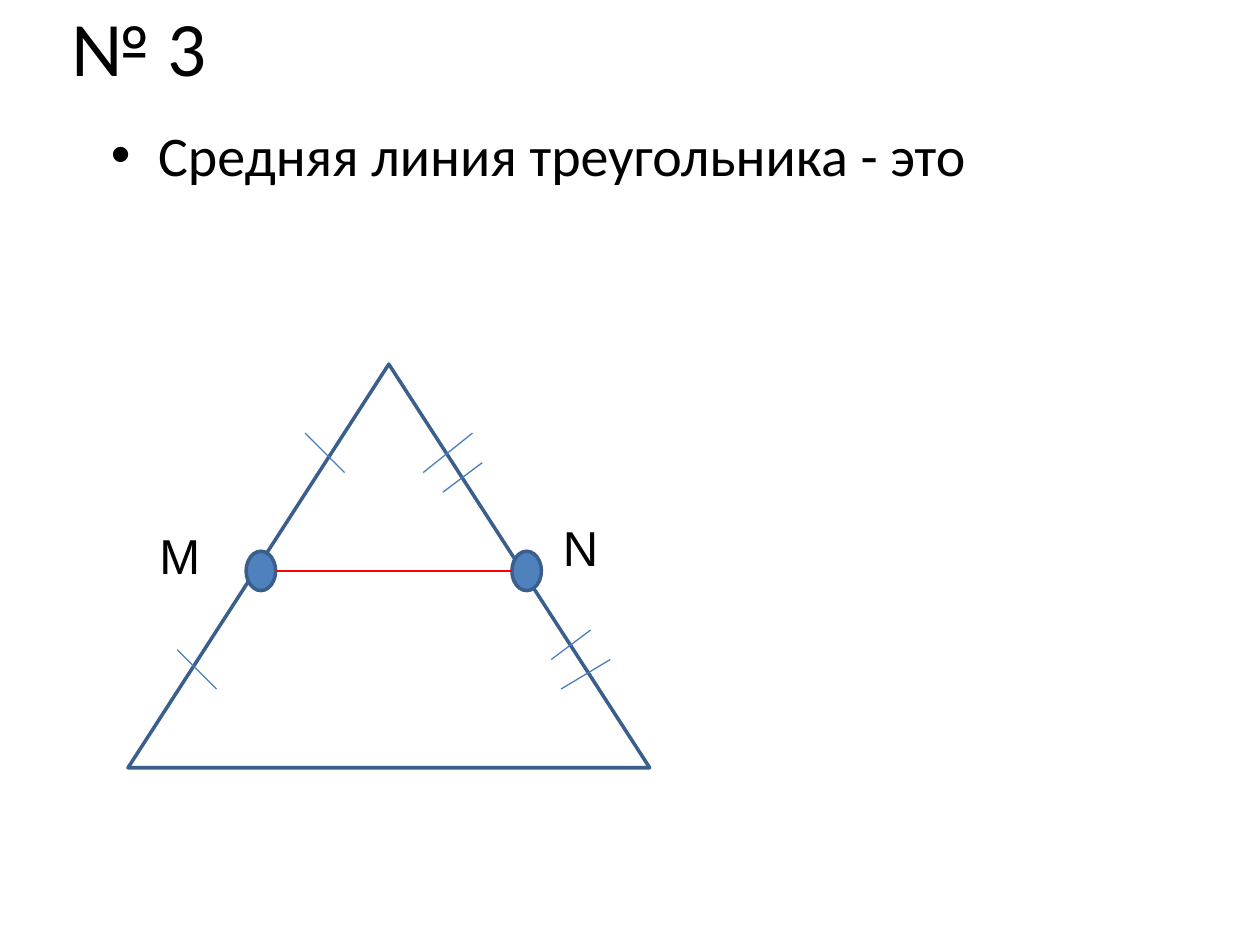
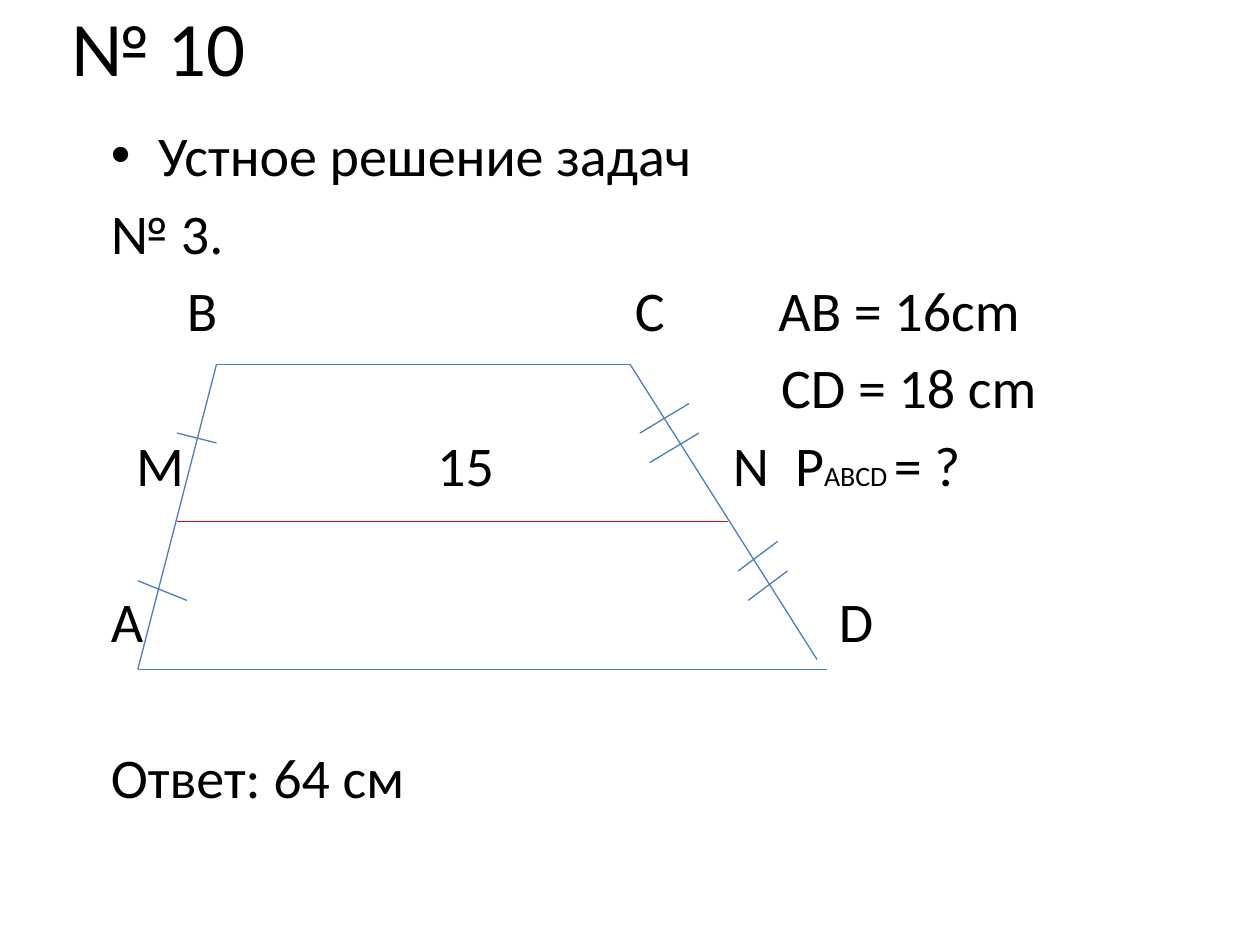
from lxml import etree
from pptx import Presentation
from pptx.dml.color import RGBColor
from pptx.enum.shapes import MSO_CONNECTOR, MSO_SHAPE
from pptx.enum.text import MSO_ANCHOR
from pptx.oxml.ns import qn
from pptx.util import Pt

STRAIGHT = MSO_CONNECTOR.STRAIGHT
TRIANGLE, OVAL = MSO_SHAPE.ISOSCELES_TRIANGLE, MSO_SHAPE.OVAL
TOP, MIDDLE = MSO_ANCHOR.TOP, MSO_ANCHOR.MIDDLE

BLACK = RGBColor(0x00, 0x00, 0x00)
BLUE = RGBColor(0x4F, 0x81, 0xBD)
OUTLINE = RGBColor(0x3A, 0x5F, 0x8C)
THIN_BLUE = RGBColor(0x4B, 0x7E, 0xBC)
RED = RGBColor(0xFF, 0x00, 0x00)

GRID = 45 / 8        # drawing grid step, in points
HANG = 27            # hanging indent of a bullet
GAP = 5.8            # space between body rows
ROW_SKIP = 50.7      # space that leaves one row free


class Lesson:
    """Holds the deck, its style and the current page."""

    def __init__(self):
        self.deck = Presentation()
        self.deck.slide_width, self.deck.slide_height = Pt(720), Pt(540)
        self.page = None

    def new_page(self, title):
        self.page = self.deck.slides.add_slide(self.deck.slide_layouts[6])
        frame = self.text_box(33.75, 0, 648, 52, MIDDLE)
        self.add_spans(frame.paragraphs[0], [(title, 44)], "Calibri")

    def text_box(self, left, top, width, height, anchor=TOP):
        box = self.page.shapes.add_textbox(Pt(left), Pt(top), Pt(width), Pt(height))
        frame = box.text_frame
        frame.word_wrap = True
        frame.vertical_anchor = anchor
        return frame

    def add_spans(self, para, spans, face):
        for text, size in spans:
            span = para.add_run()
            span.text = text
            span.font.size = Pt(size)
            span.font.name = face
            span.font.color.rgb = BLACK

    def body(self, bullet, rows=()):
        """One bulleted line, then rows of (space before, tab stops, spans)."""
        frame = self.text_box(56.25, 65.5, 607.5, 418.5)
        para = frame.paragraphs[0]
        props = para._p.get_or_add_pPr()
        props.set("marL", str(Pt(HANG)))
        props.set("indent", str(-Pt(HANG)))
        etree.SubElement(props, qn("a:buFont"), typeface="Arial")
        etree.SubElement(props, qn("a:buChar"), char="•")
        self.add_spans(para, [(bullet, 32)], "Calibri")
        for space, stops, spans in rows:
            para = frame.add_paragraph()
            if stops:
                tabs = etree.SubElement(para._p.get_or_add_pPr(), qn("a:tabLst"))
                for stop in stops:
                    etree.SubElement(tabs, qn("a:tab"), pos=str(Pt(stop)), algn="l")
            para.space_before = Pt(space)
            self.add_spans(para, spans, "Calibri")

    def label(self, text, left, top):
        frame = self.text_box(left, top, 56, 41)
        self.add_spans(frame.paragraphs[0], [(text, 28)], "Arial")

    def figure(self, kind, left, top, width, height, fill=None):
        sides = [Pt(GRID * side) for side in (left, top, width, height)]
        shape = self.page.shapes.add_shape(kind, *sides)
        shape.shadow.inherit = False
        if fill is None:
            shape.fill.background()
        else:
            shape.fill.solid()
            shape.fill.fore_color.rgb = fill
        shape.line.color.rgb = OUTLINE
        shape.line.width = Pt(2)

    def lines(self, segments, color=THIN_BLUE):
        for segment in segments:
            ends = [Pt(GRID * value) for value in segment]
            line = self.page.shapes.add_connector(STRAIGHT, *ends)
            line.line.color.rgb = color
            line.line.width = Pt(0.75)
            etree.SubElement(line._element.spPr, qn("a:effectLst"))


def triangle_page(lesson):
    lesson.new_page("№ 3")
    lesson.body("Средняя линия треугольника - это")
    lesson.figure(TRIANGLE, 13, 37, 53, 41)
    # Midpoints and the midline
    for left in (25, 52):
        lesson.figure(OVAL, left, 56, 3, 4, BLUE)
    lesson.lines([(28, 58, 52, 58)], RED)
    # Marks of equal halves
    lesson.lines([
        (31, 44, 35, 48), (18, 66, 22, 70),
        (48, 44, 43, 48), (49, 47, 45, 50),
        (60, 64, 56, 67), (62, 67, 57, 70),
    ])
    lesson.label("M", 84, 297)
    lesson.label("N", 314.6, 292.3)


def trapezoid_page(lesson):
    lesson.new_page("№ 10")
    lesson.body("Устное решение задач", [
        (GAP, [], [("№ 3.", 32)]),
        (GAP, [43.4, 299.5, 381.5], [("\tВ\tС\tAB = 16cm", 32)]),
        (GAP, [383], [("\tCD = 18 cm", 32)]),
        (GAP, [14.5, 186.5, 355.5, 391],
         [("\tM\t15\tN\tP", 32), ("ABCD ", 16), ("= ?", 32)]),
        (ROW_SKIP, [416], [("А\tD", 32)]),
        (ROW_SKIP, [], [("Ответ: 64 см", 32)]),
    ])
    # Sides and the midline
    lesson.lines([
        (22, 37, 64, 37), (22, 37, 14, 68),
        (64, 37, 83, 67), (14, 68, 84, 68),
    ])
    lesson.lines([(18, 53, 74, 53)], RED)
    # Marks of equal halves
    lesson.lines([
        (18, 44, 22, 45), (14, 59, 19, 61),
        (70, 41, 65, 44), (71, 44, 66, 47),
        (79, 55, 75, 58), (80, 58, 76, 61),
    ])


def main():
    lesson = Lesson()
    triangle_page(lesson)
    trapezoid_page(lesson)
    lesson.deck.save("out.pptx")


if __name__ == "__main__":
    main()
